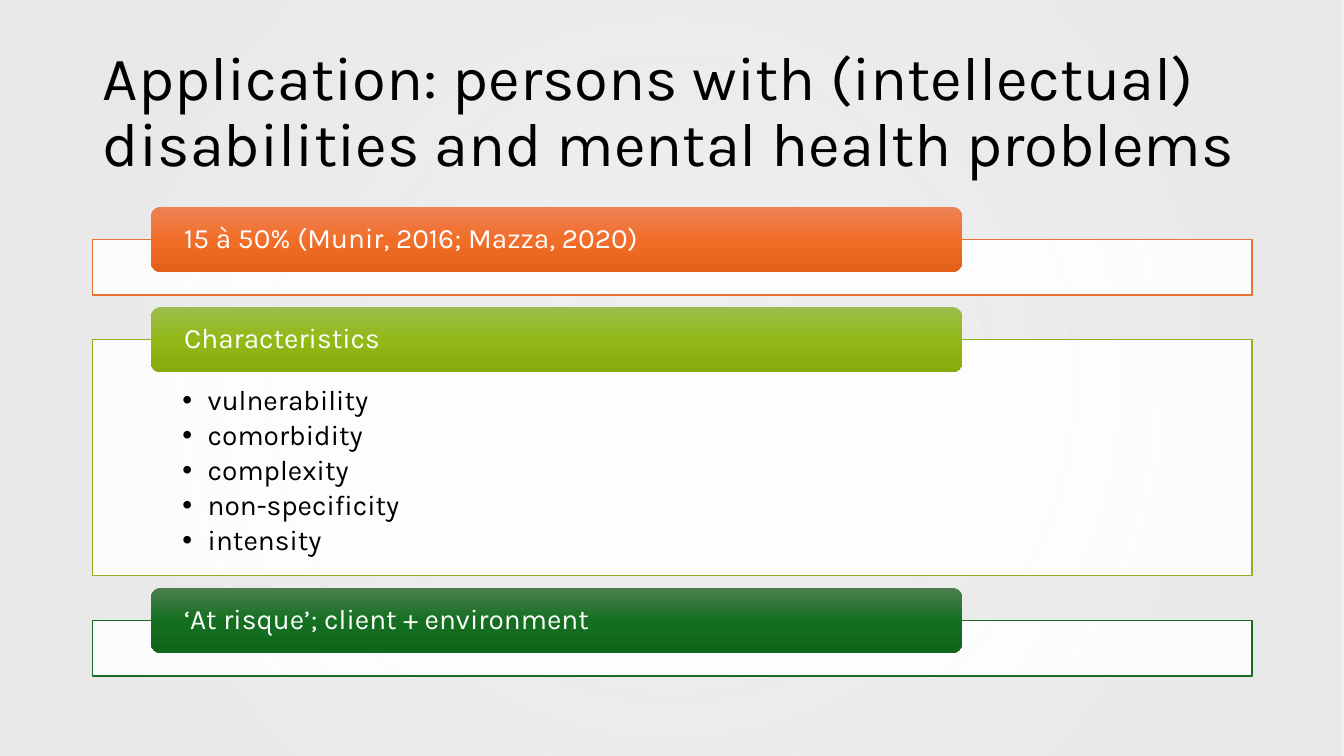
from lxml import etree
from pptx import Presentation
from pptx import util as u
from pptx.dml.color import RGBColor
from pptx.enum import shapes, text
from pptx.oxml.ns import qn

FONT = "Karla"
LEFT, WIDTH = 0.92, 11.5
PILL_HEIGHT = 0.65
SECTION_GAP = 0.12

# Heading, panel height, line colour, gradient of the heading, bullets
SECTIONS = [
    ("15 à 50% (Munir, 2016; Mazza, 2020)", 0.55, "E97132",
     ("ED8257", "F26E29", "E25F1A"), []),
    ("Characteristics", 2.34, "8EB21E", ("9CBD4E", "92B916", "85AB0D"),
     ["vulnerability", "comorbidity", "complexity", "non-specificity", "intensity"]),
    ("‘At risque’; client + environment", 0.55, "196B24",
     ("4D7E50", "156F21", "0F661B"), []),
]


def color(value):
    return RGBColor.from_string(value)


def add_child(parent, tag, **attributes):
    child = etree.SubElement(parent, qn(tag))
    for name, value in attributes.items():
        child.set(name, str(value))
    return child


def set_gradient(shape, stops, radial=False):
    """Fill with (position %, colour, opacity %) stops, downwards or from the centre."""
    shape.fill.gradient()
    gradient = shape._element.spPr.find(qn("a:gradFill"))
    for child in list(gradient):
        gradient.remove(child)
    stop_list = add_child(gradient, "a:gsLst")
    for position, value, opacity in stops:
        stop = add_child(stop_list, "a:gs", pos=position * 1000)
        stop_color = add_child(stop, "a:srgbClr", val=value)
        if opacity < 100:
            add_child(stop_color, "a:alpha", val=opacity * 1000)
    if radial:
        path = add_child(gradient, "a:path", path="circle")
        add_child(path, "a:fillToRect", l=50000, t=50000, r=50000, b=50000)
    else:
        add_child(gradient, "a:lin", ang=5400000, scaled=0)


def add_box(page, kind, left, top, width, height):
    box = page.shapes.add_shape(kind, *(u.Inches(n) for n in (left, top, width, height)))
    box.shadow.inherit = False
    box.line.fill.background()
    return box


def set_frame(box, anchor, left, top, right, bottom):
    frame = box.text_frame
    frame.word_wrap = True
    frame.vertical_anchor = anchor
    frame.margin_left, frame.margin_top = u.Inches(left), u.Inches(top)
    frame.margin_right, frame.margin_bottom = u.Inches(right), u.Inches(bottom)
    return frame


def write(para, words, size=20, fill="000000", bullet=False, after=0):
    para.alignment = text.PP_ALIGN.LEFT
    para.line_spacing = 0.9
    para.space_before = u.Pt(0)
    para.space_after = u.Pt(after)
    if bullet:
        para.level = 1
        properties = para._p.get_or_add_pPr()
        properties.set("marL", str(u.Inches(0.25)))
        properties.set("indent", str(u.Inches(-0.25)))
        add_child(properties, "a:buFont", typeface="Arial")
        add_child(properties, "a:buChar", char="•")
    span = para.add_run()
    span.text = words
    span.font.name = FONT
    span.font.size = u.Pt(size)
    span.font.color.rgb = color(fill)


def add_backdrop(page, width, height):
    backdrop = add_box(page, shapes.MSO_SHAPE.RECTANGLE, 0, 0, width, height)
    set_gradient(backdrop, [(10, "E8E8E8", 68), (85, "E8E8E8", 97)], radial=True)
    page.shapes._spTree.insert(2, backdrop._element)  # behind the title


def add_title(page, words, left, top, width, height):
    title = page.shapes.title
    title.left, title.top = u.Inches(left), u.Inches(top)
    title.width, title.height = u.Inches(width), u.Inches(height)
    frame = set_frame(title, text.MSO_ANCHOR.MIDDLE, 0.1, 0.05, 0.1, 0.05)
    frame.auto_size = text.MSO_AUTO_SIZE.NONE
    write(frame.paragraphs[0], words, size=44)


def add_panel(page, left, top, width, height, line, bullets):
    panel = add_box(page, shapes.MSO_SHAPE.RECTANGLE, left, top, width, height)
    panel.fill.solid()
    panel.fill.fore_color.rgb = color("FFFFFF")
    fill_color = panel._element.spPr.find(qn("a:solidFill"))[0]
    add_child(fill_color, "a:alpha", val=90000)
    panel.line.color.rgb = color(line)
    panel.line.width = u.Pt(1)
    if bullets:
        frame = set_frame(panel, text.MSO_ANCHOR.TOP, 0.89, 0.46, 0.89, 0.16)
        for index, words in enumerate(bullets):
            para = frame.add_paragraph() if index else frame.paragraphs[0]
            write(para, words, bullet=True, after=3.5)


def add_section(page, left, top, width, section):
    """Place a panel with its overlapping heading; return the panel's bottom."""
    heading, height, line, colors, bullets = section
    panel_top = top + PILL_HEIGHT / 2
    add_panel(page, left, panel_top, width, height, line, bullets)
    pill = add_box(page, shapes.MSO_SHAPE.ROUNDED_RECTANGLE,
                   left + width * 0.05, top, width * 0.7, PILL_HEIGHT)
    set_gradient(pill, [(50 * i, value, 100) for i, value in enumerate(colors)])
    frame = set_frame(pill, text.MSO_ANCHOR.MIDDLE, 0.3, 0, 0.3, 0)
    write(frame.paragraphs[0], heading, fill="FFFFFF")
    return panel_top + height


def main():
    deck = Presentation()
    deck.slide_width, deck.slide_height = u.Inches(13.33), u.Inches(7.5)
    page = deck.slides.add_slide(deck.slide_layouts.get_by_name("Title Only"))
    add_backdrop(page, 13.33, 7.5)
    add_title(page, "Application: persons with (intellectual) disabilities "
              "and mental health problems", LEFT, 0.4, WIDTH, 1.45)
    top = 2.05
    for section in SECTIONS:
        top = add_section(page, LEFT, top, WIDTH, section) + SECTION_GAP
    deck.save("out.pptx")


if __name__ == "__main__":
    main()
